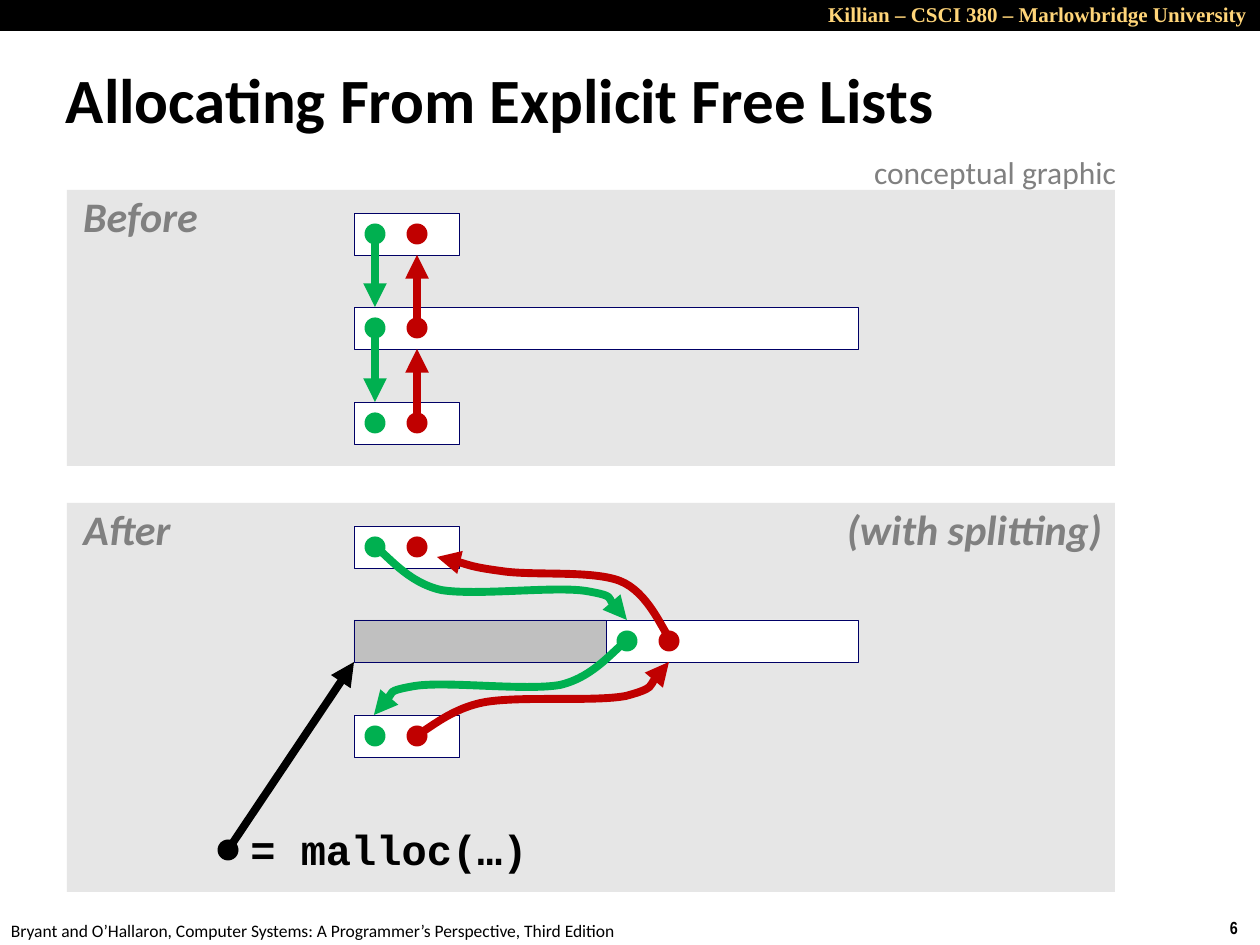
from dataclasses import dataclass

from lxml.etree import SubElement
from pptx import Presentation
from pptx.dml.color import RGBColor
from pptx.enum.shapes import MSO_CONNECTOR, MSO_SHAPE
from pptx.enum.text import MSO_ANCHOR, MSO_AUTO_SIZE as AUTO, PP_ALIGN as AL
from pptx.oxml.ns import qn
from pptx.util import Pt

EMU_PER_PX = 914400 / 126
DOT = 21
ROW_H = 42
ROWS = (23, 117, 212)        # tops of the three block rows within a panel
BLOCK_X, SMALL_W, LARGE_W = 287, 105, 504
NEXT_X, PREV_X = 308, 350    # dot centres within a panel
SPLIT = LARGE_W // 2


@dataclass(frozen=True)
class Theme:
    black: str = "000000"
    white: str = "FFFFFF"
    gold: str = "FFD579"
    panel: str = "E6E6E6"
    used: str = "C0C0C0"
    label: str = "808080"
    edge: str = "000066"
    next: str = "00B050"
    prev: str = "C00000"
    body: str = "Calibri"
    code: str = "Courier New"
    serif: str = "Times New Roman"
    narrow: str = "Arial Narrow"
    title_pt: int = 36
    label_pt: int = 24
    note_pt: int = 18
    header_pt: int = 12
    footer_pt: int = 10
    edge_pt: float = 0.25
    arrow_pt: float = 4.5


T = Theme()
LABEL = dict(size=T.label_pt, color=T.label, bold=True, italic=True)
LABEL_BOX = dict(inset=6, align=AL.CENTER, spacing=0.9)


def px(*values):
    return [round(v * EMU_PER_PX) for v in values]


def rgb(color):
    return RGBColor.from_string(color)


def add_shape(sl, kind, box, fill, line=None):
    s = sl.shapes.add_shape(kind, *px(*box))
    s.shadow.inherit = False
    s.fill.solid()
    s.fill.fore_color.rgb = rgb(fill)
    if line:
        s.line.color.rgb = rgb(line)
        s.line.width = Pt(T.edge_pt)
    else:
        s.line.fill.background()


def add_text(sl, box, text, font, inset=13, align=AL.LEFT, spacing=None,
             wrap=False, anchor=MSO_ANCHOR.TOP, auto=AUTO.SHAPE_TO_FIT_TEXT):
    tf = sl.shapes.add_textbox(*px(*box)).text_frame
    side, edge = px(inset, 6)
    frame = dict(word_wrap=wrap, auto_size=auto, vertical_anchor=anchor,
                 margin_left=side, margin_right=side,
                 margin_top=edge, margin_bottom=edge)
    for name, value in frame.items():
        setattr(tf, name, value)
    p = tf.paragraphs[0]
    p.alignment = align
    if spacing:
        p.line_spacing = spacing
    r = p.add_run()
    r.text = text
    style = {"name": T.body, "color": T.black, **font}
    r.font.color.rgb = rgb(style.pop("color"))
    style["size"] = Pt(style["size"])
    for name, value in style.items():
        setattr(r.font, name, value)


def style_arrow(s, color):
    s.line.color.rgb = rgb(color)
    s.line.width = Pt(T.arrow_pt)
    ln = s.element.spPr.find(qn("a:ln"))
    SubElement(ln, qn("a:tailEnd"), type="triangle")


def add_arrow(sl, start, end, color):
    s = sl.shapes.add_connector(MSO_CONNECTOR.STRAIGHT, *px(*start, *end))
    style_arrow(s, color)
    SubElement(s.element.spPr, qn("a:effectLst"))


def add_curve(sl, points, color):
    """Draw an arrow through a start point and triples of Bézier points."""
    fb = sl.shapes.build_freeform(*points[0], scale=EMU_PER_PX)
    fb.add_line_segments(points[1:], close=False)
    s = fb.convert_to_shape()
    s.shadow.inherit = False
    s.fill.background()
    style_arrow(s, color)
    path = next(s.element.spPr.iter(qn("a:path")))
    segments = path.findall(qn("a:lnTo"))
    for i in range(0, len(segments), 3):
        bezier = SubElement(path, qn("a:cubicBezTo"))
        for segment in segments[i:i + 3]:
            bezier.append(segment[0])
            path.remove(segment)


def add_dot(sl, x, y, color):
    add_shape(sl, MSO_SHAPE.OVAL, (x - DOT / 2, y - DOT / 2, DOT, DOT), color)


def add_block(sl, x, y, w, fill=T.white):
    add_shape(sl, MSO_SHAPE.RECTANGLE, (x, y, w, ROW_H), fill, T.edge)


def add_dot_pair(sl, x, y):
    """Put the next and prev dots in the block row with top y."""
    add_dot(sl, x, y + ROW_H / 2, T.next)
    add_dot(sl, x + PREV_X - NEXT_X, y + ROW_H / 2, T.prev)


def add_panel(sl, box, label, label_w):
    x, y = box[:2]
    add_shape(sl, MSO_SHAPE.RECTANGLE, box, T.panel)
    add_text(sl, (x + 9, y, label_w, 59), label, LABEL, **LABEL_BOX)


def add_before(sl, box):
    x, y = box[:2]
    add_panel(sl, box, "Before", 129)
    tops = [y + row for row in ROWS]
    for top, w in zip(tops, (SMALL_W, LARGE_W, SMALL_W)):
        add_block(sl, x + BLOCK_X, top, w)
        add_dot_pair(sl, x + NEXT_X, top)
    for upper, lower in zip(tops, tops[1:]):
        add_arrow(sl, (x + NEXT_X, upper + ROW_H / 2), (x + NEXT_X, lower), T.next)
        add_arrow(sl, (x + PREV_X, lower + ROW_H / 2), (x + PREV_X, upper + ROW_H), T.prev)


def add_after(sl, box):
    x, y = box[:2]
    add_panel(sl, box, "After", 102)
    add_text(sl, (x + 772, y, 271, 59), "(with splitting)", LABEL, **LABEL_BOX)
    top, middle, bottom = (y + row for row in ROWS)
    for row in (top, bottom):
        add_block(sl, x + BLOCK_X, row, SMALL_W)
        add_dot_pair(sl, x + NEXT_X, row)
    add_block(sl, x + BLOCK_X + SPLIT, middle, SPLIT)
    add_block(sl, x + BLOCK_X, middle, SPLIT, T.used)
    add_dot_pair(sl, x + NEXT_X + SPLIT, middle)

    add_dot(sl, x + 161, y + 347, T.black)
    add_arrow(sl, (x + 161, y + 347), (x + BLOCK_X, middle + ROW_H), T.black)
    add_text(sl, (x + 176, y + 320, 292, 59), "= malloc(…)",
             dict(size=T.label_pt, name=T.code, bold=True), **LABEL_BOX)

    next_down = [(307, 43), (319, 50), (339, 79), (374, 87), (409, 93),
                 (487, 83), (519, 88), (549, 93), (552, 111), (560, 117)]
    next_back = [(NEXT_X + 559 - cx, cy + ROWS[2] - ROWS[1]) for cx, cy in next_down]
    prev_up = [(603, 136), (595, 126), (581, 89), (553, 78), (525, 67),
               (465, 73), (434, 68), (404, 64), (384, 56), (370, 54)]
    prev_back = [(350, 232), (361, 227), (384, 205), (419, 199), (455, 193),
                 (528, 199), (559, 193), (589, 185), (593, 166), (602, 159)]
    for points, color in ((next_down, T.next), (next_back, T.next),
                          (prev_up, T.prev), (prev_back, T.prev)):
        add_curve(sl, [(x + cx, y + cy) for cx, cy in points], color)


def add_header(sl, box):
    x, y, w, h = box
    add_shape(sl, MSO_SHAPE.RECTANGLE, box, T.black)
    add_text(sl, (x + w - 567, y - 4, 567, 38),
             "Killian – CSCI 380 – Marlowbridge University",
             dict(size=T.header_pt, name=T.serif, color=T.gold, bold=True),
             align=AL.RIGHT, wrap=True)


def add_footer(sl, box):
    x, y, w, h = box
    add_text(sl, (x - 2, y + 3, 640, h),
             "Bryant and O’Hallaron, Computer Systems: A Programmer’s Perspective, Third Edition",
             dict(size=T.footer_pt))
    add_text(sl, (x + w - 43, y, 43, h), "6",
             dict(size=T.footer_pt, name=T.narrow, bold=True))


def main():
    prs = Presentation()
    prs.slide_width, prs.slide_height = px(1260, 945)
    sl = prs.slides.add_slide(prs.slide_layouts[6])
    add_header(sl, (0, 0, 1260, 31))
    add_footer(sl, (0, 911, 1260, 34))
    add_text(sl, (53, 64, 1102, 79), "Allocating From Explicit Free Lists",
             dict(size=T.title_pt, bold=True), spacing=0.87, wrap=True,
             anchor=MSO_ANCHOR.MIDDLE, auto=AUTO.NONE)
    add_before(sl, (67, 190, 1048, 276))
    add_after(sl, (67, 503, 1048, 389))
    add_text(sl, (861, 147, 273, 50), "conceptual graphic",
             dict(size=T.note_pt, color=T.label))
    prs.save("out.pptx")


if __name__ == "__main__":
    main()
